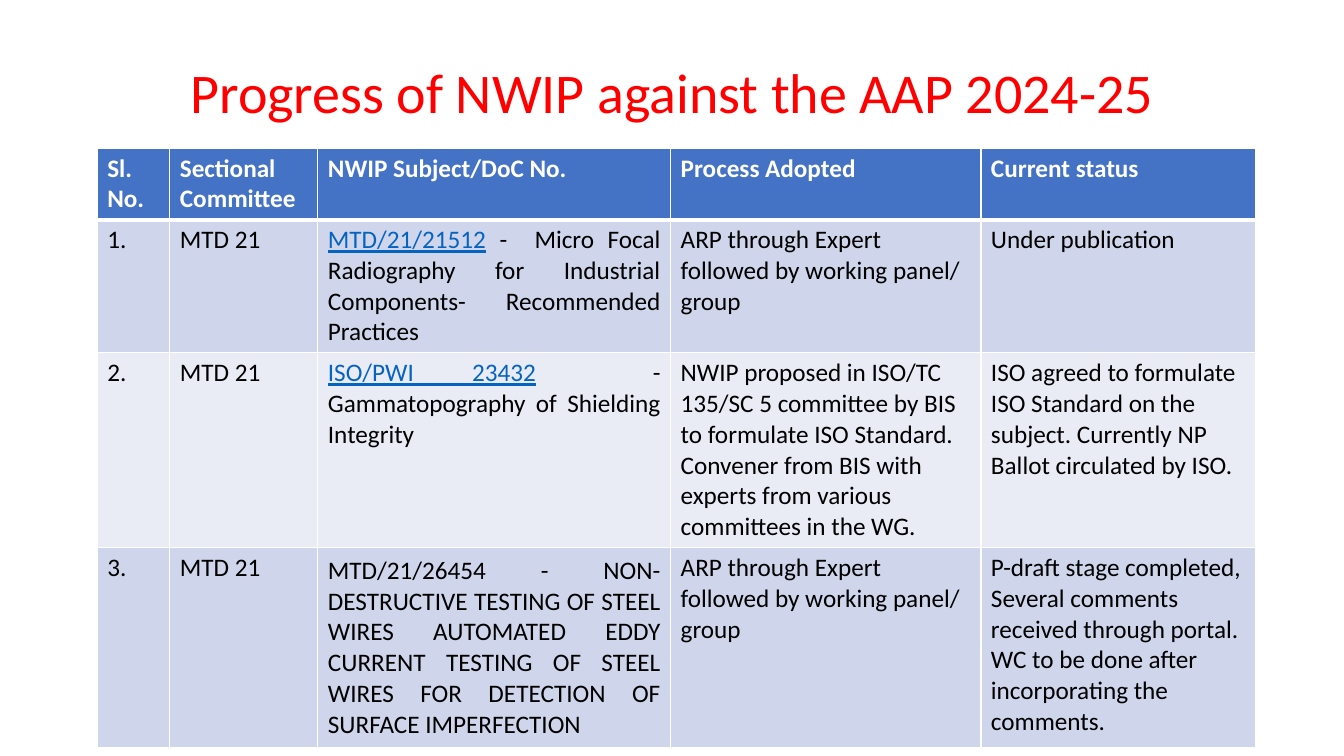
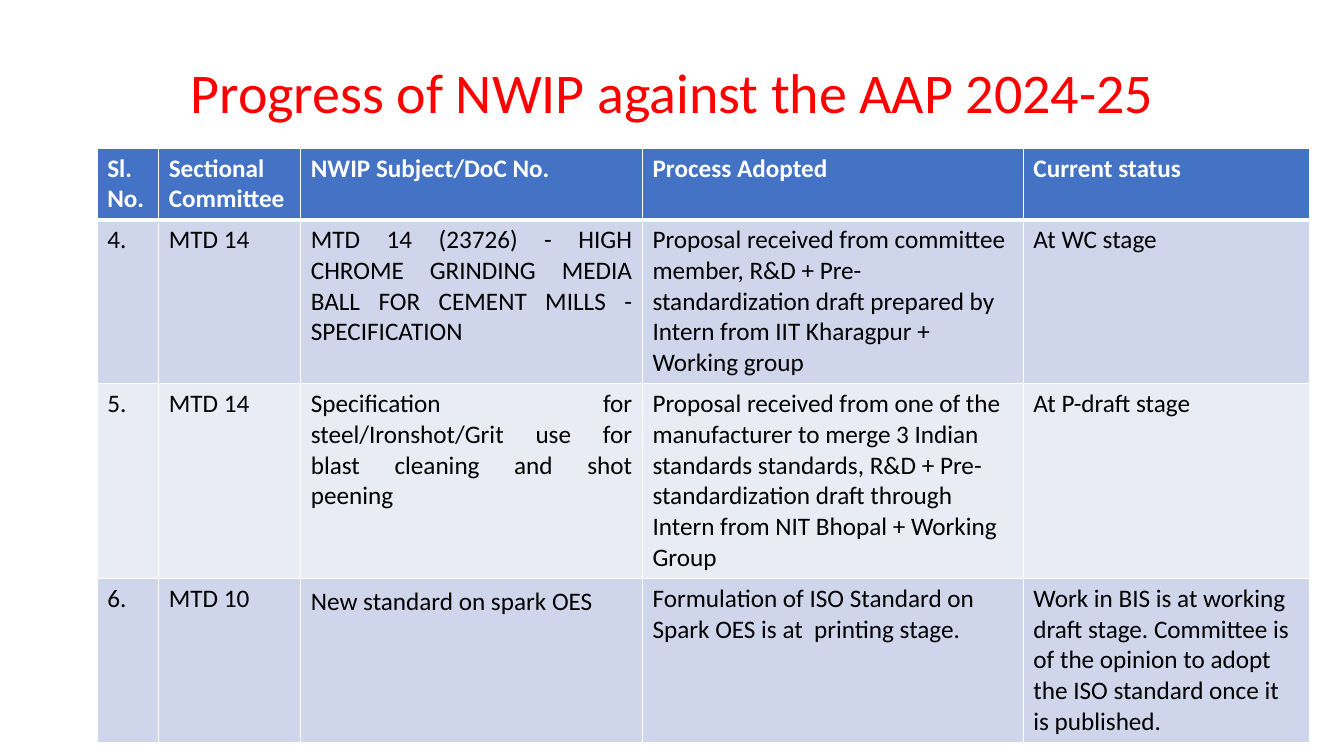
from dataclasses import dataclass

from lxml.etree import SubElement
from pptx import Presentation
from pptx.dml.color import RGBColor
from pptx.enum.text import MSO_ANCHOR, MSO_AUTO_SIZE, PP_ALIGN
from pptx.oxml.ns import qn
from pptx.util import Cm, Pt


@dataclass(frozen=True)
class Theme:
    """Colours, type sizes and line widths shared by the slides."""

    font: str = "Calibri"
    title_size: int = 40
    body_size: int = 18
    title: str = "FF0000"
    header: str = "4472C4"
    bands: tuple = ("CFD5EA", "E9EBF5")
    white: str = "FFFFFF"
    text: str = "000000"
    reference: str = "0563C1"
    thin: int = 1
    thick: int = 3


@dataclass(frozen=True)
class Box:
    """A left, top, width and height in centimetres."""

    left: float
    top: float
    width: float
    height: float


@dataclass(frozen=True)
class Span:
    """A piece of text with its own look."""

    text: str
    color: str | None = None
    underline: bool = False


THEME = Theme()
TITLE = "Progress of NWIP against the AAP 2024-25"
TITLE_BOX = Box(2.33, 1.01, 29.21, 2.77)
HEADINGS = ("Sl. No.", "Sectional Committee", "NWIP Subject/DoC No.", "Process Adopted", "Current status")
SUBJECT_COLUMN = 2
LINE_HEIGHT = 0.77
CELL_PADDING = 0.25
EXPERT_PROCESS = "ARP through Expert followed by working panel/ group"

PAGES = (
    {
        "columns": (1.83, 3.73, 8.89, 7.82, 6.93),
        "lines": (2, 4, 6, 6),
        "rows": (
            ("1.", "MTD 21",
             (Span("MTD/21/21512", THEME.reference, True),
              Span(" -  Micro Focal Radiography for Industrial Components- Recommended Practices")),
             EXPERT_PROCESS, "Under publication"),
            ("2.", "MTD 21",
             (Span("ISO/PWI 23432", THEME.reference, True), Span("  -"), Span(" ", underline=True),
              Span("Gammatopography of Shielding Integrity")),
             "NWIP proposed in ISO/TC 135/SC 5 committee by BIS to formulate ISO Standard. "
             "Convener from BIS with experts from various committees in the WG.",
             "ISO agreed to formulate ISO Standard on the subject. Currently NP Ballot circulated by ISO."),
            ("3.", "MTD 21",
             "MTD/21/26454 - NON-DESTRUCTIVE TESTING OF STEEL WIRES AUTOMATED EDDY CURRENT "
             "TESTING OF STEEL WIRES FOR DETECTION OF SURFACE IMPERFECTION",
             EXPERT_PROCESS,
             "P-draft stage completed, Several comments received through portal. "
             "WC to be done after incorporating the comments."),
        ),
    },
    {
        "columns": (1.55, 3.58, 8.61, 9.6, 7.21),
        "lines": (2, 5, 6, 5),
        "rows": (
            ("4.", "MTD 14",
             "MTD 14 (23726) - HIGH CHROME GRINDING MEDIA BALL FOR CEMENT MILLS - SPECIFICATION",
             "Proposal received from committee member, R&D + Pre-standardization draft prepared by "
             "Intern from IIT Kharagpur + Working group",
             "At WC stage"),
            ("5.", "MTD 14",
             "Specification for steel/Ironshot/Grit use for blast cleaning and shot peening",
             "Proposal received from one of the manufacturer to merge 3 Indian standards standards, "
             "R&D + Pre-standardization draft through Intern from NIT Bhopal + Working Group",
             "At P-draft stage"),
            ("6.", "MTD 10", "New standard on spark OES",
             "Formulation of ISO Standard on Spark OES is at  printing stage.",
             "Work in BIS is at working draft stage. Committee is of the opinion to adopt "
             "the ISO standard once it is published."),
        ),
    },
)


def add_spans(para, content, size, color, bold=False):
    """Add plain text or a sequence of spans to a paragraph."""
    spans = (Span(content),) if isinstance(content, str) else content
    for span in spans:
        run = para.add_run()
        run.text = span.text
        run.font.name = THEME.font
        run.font.size = Pt(size)
        run.font.bold = bold
        run.font.underline = span.underline
        run.font.color.rgb = RGBColor.from_string(span.color or color)


def set_borders(cell, top, bottom):
    """Give a cell white borders with the chosen top and bottom widths."""
    properties = cell._tc.get_or_add_tcPr()
    sides = {"L": THEME.thin, "R": THEME.thin, "T": top, "B": bottom}
    for side, width in sides.items():
        line = SubElement(properties, qn(f"a:ln{side}"), w=str(Pt(width)))
        fill = SubElement(line, qn("a:solidFill"))
        SubElement(fill, qn("a:srgbClr"), val=THEME.white)


def place_title(page, box):
    """Move and format the title placeholder."""
    title = page.shapes.title
    title.left, title.top = Cm(box.left), Cm(box.top)
    title.width, title.height = Cm(box.width), Cm(box.height)
    frame = title.text_frame
    frame.word_wrap = True
    frame.auto_size = MSO_AUTO_SIZE.NONE
    frame.vertical_anchor = MSO_ANCHOR.MIDDLE
    para = frame.paragraphs[0]
    para.alignment = PP_ALIGN.CENTER
    para.line_spacing = 0.9
    add_spans(para, TITLE, THEME.title_size, THEME.title)


def fill_cell(cell, content, row, column):
    """Write and format one cell according to its row and column."""
    is_header = row == 0
    set_borders(
        cell,
        top=THEME.thick if row == 1 else THEME.thin,
        bottom=THEME.thick if is_header else THEME.thin,
    )
    background = THEME.header if is_header else THEME.bands[(row - 1) % 2]
    cell.fill.solid()
    cell.fill.fore_color.rgb = RGBColor.from_string(background)
    para = cell.text_frame.paragraphs[0]
    if column == SUBJECT_COLUMN and not is_header:
        para.alignment = PP_ALIGN.JUSTIFY
    add_spans(para, content, THEME.body_size, THEME.white if is_header else THEME.text, is_header)


def place_progress_table(page, box, columns, lines, rows):
    """Place the progress table in its box."""
    content = (HEADINGS, *rows)
    table = page.shapes.add_table(
        len(content), len(columns), Cm(box.left), Cm(box.top), Cm(box.width), Cm(box.height)
    ).table
    table.horz_banding = False
    for column, width in zip(table.columns, columns):
        column.width = Cm(width)
    for row, count in zip(table.rows, lines):
        row.height = Cm(CELL_PADDING + LINE_HEIGHT * count)
    for row, values in enumerate(content):
        for column, value in enumerate(values):
            fill_cell(table.cell(row, column), value, row, column)
    last_subject = table.cell(len(rows), SUBJECT_COLUMN)
    last_subject.margin_top = last_subject.margin_bottom = Cm(0.2)


def build_progress_page(deck, columns, lines, rows):
    """Add one slide with the title and a progress table."""
    page = deck.slides.add_slide(deck.slide_layouts[5])
    place_title(page, TITLE_BOX)
    height = sum(CELL_PADDING + LINE_HEIGHT * count for count in lines)
    place_progress_table(page, Box(2.45, 3.73, sum(columns), height), columns, lines, rows)


def main():
    """Build and save the deck."""
    deck = Presentation()
    deck.slide_width, deck.slide_height = Cm(33.87), Cm(19.05)
    for content in PAGES:
        build_progress_page(deck, **content)
    deck.save("out.pptx")


if __name__ == "__main__":
    main()
